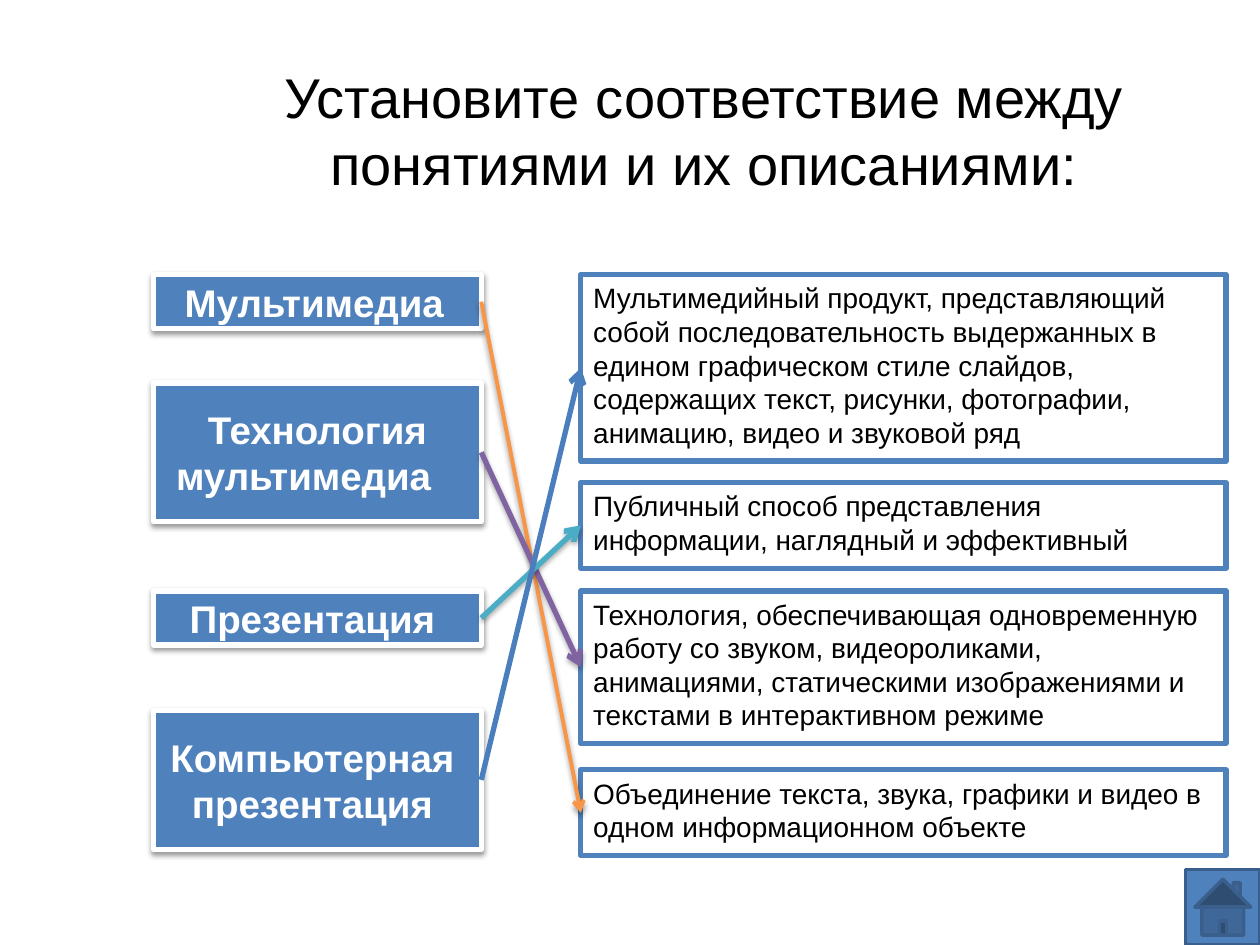
from dataclasses import dataclass
from typing import Any

from lxml.etree import SubElement
from pptx import Presentation
from pptx.dml.color import RGBColor
from pptx.enum.shapes import MSO_CONNECTOR as ConnectorType, MSO_SHAPE as ShapeType
from pptx.enum.text import MSO_ANCHOR as Anchor, PP_ALIGN as Align
from pptx.oxml.ns import qn
from pptx.util import Inches, Pt

COLORS = {
    "blue": "4F81BD",
    "dark_blue": "3A5F8C",
    "arrow_blue": "4B7EBC",
    "orange": "F79646",
    "purple": "8064A2",
    "teal": "4BACC6",
    "white": "FFFFFF",
    "black": "000000",
}
TITLE_FONT = {"name": "Arial", "size": Pt(32), "bold": False}
TERM_FONT = {"name": "Arial", "size": Pt(22), "bold": True}
DESCRIPTION_FONT = {"name": "Arial", "size": Pt(16), "bold": False}
TERM_LEFT, TERM_WIDTH = 1.22, 2.6
DESCRIPTION_LEFT, DESCRIPTION_WIDTH = 4.61, 5.12
RIGHT_SITE, LEFT_SITE = 3, 1


@dataclass
class Line:
    text: str
    right_indent: float = 0


@dataclass
class Term:
    top: float
    height: float
    lines: list[Line]


@dataclass
class Description:
    top: float
    height: float
    text: str


@dataclass
class Match:
    term: int
    description: int
    color: str
    width: float = 3
    opacity: int = 35
    shadow: bool = True


TERMS = [
    Term(2.18, 0.43, [Line("Мультимедиа", 0.05)]),
    Term(3.04, 1.1, [Line("Технология"), Line("мультимедиа", 0.22)]),
    Term(4.69, 0.43, [Line("Презентация", 0.08)]),
    Term(5.64, 1.1, [Line("Компьютерная", 0.08), Line("презентация")]),
]
DESCRIPTIONS = [
    Description(2.18, 1.48, "Мультимедийный продукт, представляющий собой последовательность "
                "выдержанных в едином графическом стиле слайдов, содержащих текст, рисунки, "
                "фотографии, анимацию, видео и звуковой ряд"),
    Description(3.83, 0.68, "Публичный способ представления информации, наглядный и эффективный"),
    Description(4.69, 1.21, "Технология, обеспечивающая одновременную работу со звуком, "
                "видеороликами, анимациями, статическими изображениями и текстами "
                "в интерактивном режиме"),
    Description(6.11, 0.68, "Объединение текста, звука, графики и видео в одном "
                "информационном объекте"),
]
MATCHES = [
    Match(0, 3, "orange", width=2.25, opacity=38),
    Match(1, 2, "purple"),
    Match(2, 1, "teal"),
    Match(3, 0, "arrow_blue", shadow=False),
]


def rgb(name: str) -> RGBColor:
    return RGBColor.from_string(COLORS[name])


def format_font(paragraph: Any, values: dict[str, Any], color: str) -> None:
    for attribute, value in values.items():
        setattr(paragraph.font, attribute, value)
    paragraph.font.color.rgb = rgb(color)


def add_shadow(effects: Any, opacity: int) -> None:
    shadow = SubElement(effects, qn("a:outerShdw"), blurRad=str(Pt(3.1)), dist=str(Pt(1.7)),
                        dir="5400000", rotWithShape="0")
    color = SubElement(shadow, qn("a:srgbClr"), val=COLORS["black"])
    SubElement(color, qn("a:alpha"), val=str(opacity * 1000))


def add_box(slide: Any, kind: Any, bounds: tuple[float, ...], fill: str | None,
            line: str, line_width: float) -> Any:
    shape = slide.shapes.add_shape(kind, *map(Inches, bounds))
    shape.shadow.inherit = False
    if fill:
        shape.fill.solid()
        shape.fill.fore_color.rgb = rgb(fill)
    else:
        shape.fill.background()
    shape.line.color.rgb = rgb(line)
    shape.line.width = Pt(line_width)
    return shape


def add_term(slide: Any, term: Term) -> Any:
    bounds = (TERM_LEFT, term.top, TERM_WIDTH, term.height)
    shape = add_box(slide, ShapeType.RECTANGLE, bounds, "blue", "white", 3)
    add_shadow(shape._element.spPr.find(qn("a:effectLst")), 38)
    frame = shape.text_frame
    frame.word_wrap = False
    frame.vertical_anchor = Anchor.MIDDLE
    for index, line in enumerate(term.lines):
        paragraph = frame.add_paragraph() if index else frame.paragraphs[0]
        paragraph.text = line.text
        paragraph.alignment = Align.CENTER
        if line.right_indent:
            paragraph._p.get_or_add_pPr().set("marR", str(Inches(line.right_indent)))
        format_font(paragraph, TERM_FONT, "white")
    return shape


def add_description(slide: Any, description: Description) -> Any:
    bounds = (DESCRIPTION_LEFT, description.top, DESCRIPTION_WIDTH, description.height)
    shape = add_box(slide, ShapeType.RECTANGLE, bounds, None, "blue", 3)
    frame = shape.text_frame
    frame.word_wrap = True
    frame.vertical_anchor = Anchor.TOP
    paragraph = frame.paragraphs[0]
    paragraph.text = description.text
    paragraph.alignment = Align.LEFT
    format_font(paragraph, DESCRIPTION_FONT, "black")
    return shape


def add_match(slide: Any, match: Match, term: Any, description: Any) -> None:
    connector = slide.shapes.add_connector(ConnectorType.STRAIGHT, 0, 0, 0, 0)
    connector.begin_connect(term, RIGHT_SITE)
    connector.end_connect(description, LEFT_SITE)
    connector.line.color.rgb = rgb(match.color)
    connector.line.width = Pt(match.width)
    SubElement(connector.line._get_or_add_ln(), qn("a:tailEnd"), type="arrow")
    effects = SubElement(connector._element.spPr, qn("a:effectLst"))
    if match.shadow:
        add_shadow(effects, match.opacity)


def add_title(slide: Any, text: str) -> None:
    title = slide.shapes.title
    title.left, title.top, title.width, title.height = map(Inches, (1.3, 0.44, 8.58, 1.18))
    title.text_frame.word_wrap = True
    title.text_frame.vertical_anchor = Anchor.MIDDLE
    paragraph = title.text_frame.paragraphs[0]
    paragraph.text = text
    paragraph.alignment = Align.CENTER
    format_font(paragraph, TITLE_FONT, "black")


def main() -> None:
    presentation = Presentation()
    presentation.slide_width, presentation.slide_height = Inches(10), Inches(7.5)
    slide = presentation.slides.add_slide(presentation.slide_layouts[5])
    add_title(slide, "Установите соответствие между понятиями и их описаниями:")
    terms = [add_term(slide, term) for term in TERMS]
    descriptions = [add_description(slide, description) for description in DESCRIPTIONS]
    add_box(slide, ShapeType.ACTION_BUTTON_HOME, (9.41, 6.9, 0.59, 0.6), "blue", "dark_blue", 2)
    for match in MATCHES:
        add_match(slide, match, terms[match.term], descriptions[match.description])
    presentation.save("out.pptx")


if __name__ == "__main__":
    main()
